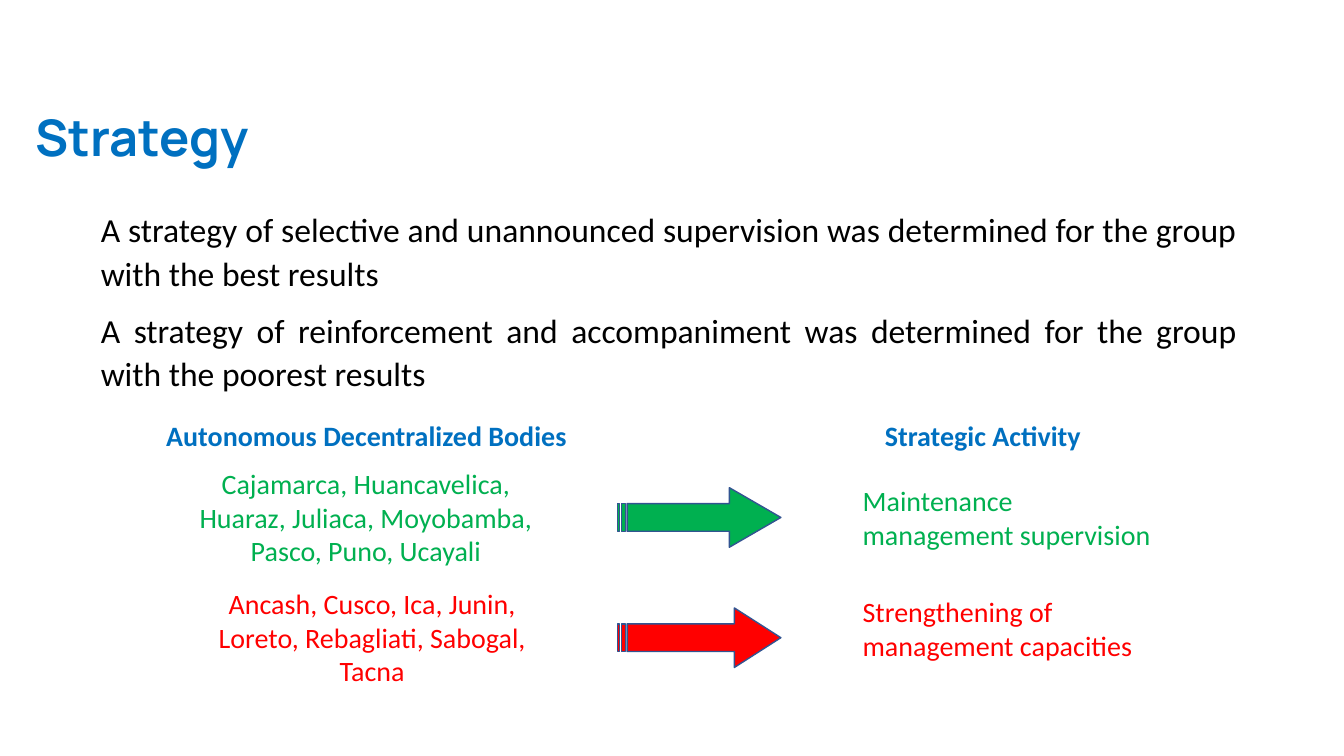
from pptx import Presentation
from pptx.dml.color import RGBColor
from pptx.enum.shapes import MSO_SHAPE
from pptx.enum.text import PP_ALIGN
from pptx.util import Cm, Pt

COLORS = {
    "blue": "0070C0",
    "black": "000000",
    "green": "00B050",
    "red": "FF0000",
    "outline": "325491",
}
HEADING = {"size": Pt(20), "name": "Calibri", "bold": True}
LABEL = {"size": Pt(20), "name": "Calibri"}


def add_text(page, box, texts, color, font, paragraph=None, wrap=True):
    """Place a text box; box is left, top, width, height in centimetres."""
    frame = page.shapes.add_textbox(*map(Cm, box)).text_frame
    frame.word_wrap = wrap
    for index, text in enumerate(texts):
        para = frame.add_paragraph() if index else frame.paragraphs[0]
        for name, value in (paragraph or {}).items():
            if index or name != "space_before":
                setattr(para, name, value)
        span = para.add_run()
        span.text = text
        for name, value in font.items():
            setattr(span.font, name, value)
        span.font.color.rgb = RGBColor.from_string(COLORS[color])


def add_title(page, box):
    add_text(page, box, ["Strategy"], "blue",
             {"size": Pt(36), "name": "Manrope", "bold": True},
             {"line_spacing": 0.9})


def add_body(page, box):
    texts = [
        "A strategy of selective and unannounced supervision was determined "
        "for the group with the best results",
        "A strategy of reinforcement and accompaniment was determined "
        "for the group with the poorest results",
    ]
    add_text(page, box, texts, "black", {"size": Pt(24), "name": "Calibri"},
             {"alignment": PP_ALIGN.JUSTIFY, "line_spacing": 1.07,
              "space_before": Pt(10)})


def add_headings(page, box):
    left, top, width, height = box
    activity_width = 5.49
    add_text(page, (left, top, 10.85, height),
             ["Autonomous Decentralized Bodies"], "blue", HEADING, wrap=False)
    add_text(page, (left + width - activity_width, top, activity_width, height),
             ["Strategic Activity"], "blue", HEADING, wrap=False)


def add_strategy_row(page, box, row):
    left, top, width, height = box
    # Bodies
    add_text(page, (left + row["indent"], top, row["bodies_width"], height),
             [row["bodies"]], row["color"], LABEL,
             {"alignment": PP_ALIGN.CENTER})
    # Arrow, centred on the row
    arrow_height = 1.5
    arrow = page.shapes.add_shape(
        MSO_SHAPE.STRIPED_RIGHT_ARROW, Cm(left + 10.92),
        Cm(top + (height - arrow_height) / 2), Cm(4.11), Cm(arrow_height))
    arrow.adjustments[0] = 0.465
    arrow.adjustments[1] = row["head"]
    arrow.shadow.inherit = False
    arrow.fill.solid()
    arrow.fill.fore_color.rgb = RGBColor.from_string(COLORS[row["color"]])
    arrow.line.color.rgb = RGBColor.from_string(COLORS["outline"])
    arrow.line.width = Pt(1)
    # Activity
    activity_left = left + 16.84
    add_text(page, (activity_left, top + row["drop"],
                    left + width - activity_left, 1.96),
             [row["activity"]], row["color"], LABEL)


def main():
    deck = Presentation()
    deck.slide_width, deck.slide_height = Cm(33.87), Cm(19.05)
    page = deck.slides.add_slide(deck.slide_layouts[6])

    add_title(page, (0.64, 2.72, 28.09, 2.54))
    add_body(page, (2.29, 5.08, 29.13, 5.33))
    add_headings(page, (3.94, 10.41, 23.6, 1.12))

    rows = [
        {"color": "green", "indent": 0, "bodies_width": 9.14, "head": 0.865,
         "drop": 0.44, "activity": "Maintenance management supervision",
         "bodies": "Cajamarca, Huancavelica, Huaraz, Juliaca, Moyobamba, "
                   "Pasco, Puno, Ucayali"},
        {"color": "red", "indent": 0.08, "bodies_width": 9.3, "head": 0.781,
         "drop": 0.2, "activity": "Strengthening of management capacities",
         "bodies": "Ancash, Cusco, Ica, Junin, Loreto, Rebagliati, Sabogal, "
                   "Tacna"},
    ]
    for index, row in enumerate(rows):
        add_strategy_row(page, (4.65, 11.63 + 3.03 * index, 24.94, 2.82), row)

    deck.save("out.pptx")


if __name__ == "__main__":
    main()
